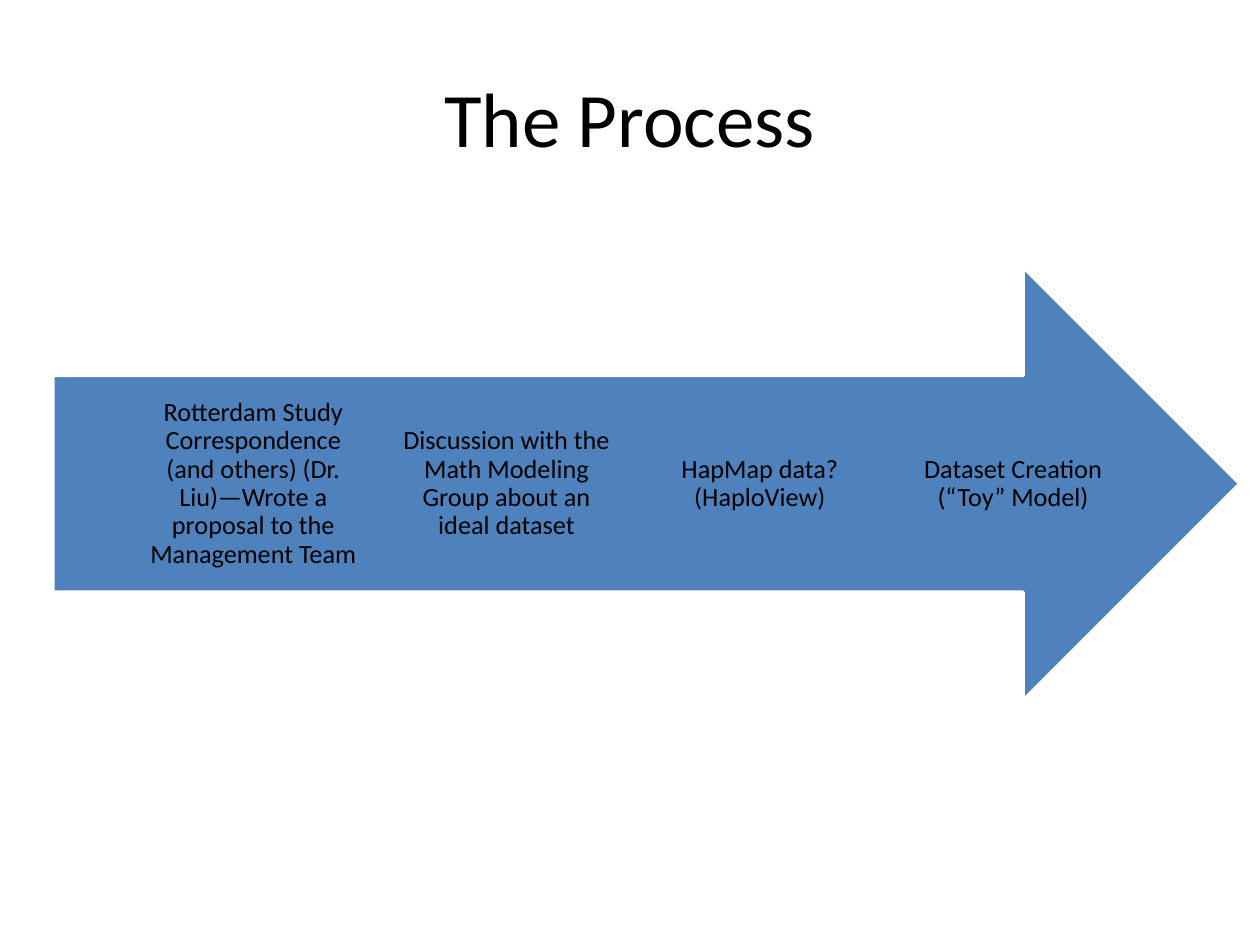
"""Build the process slide: a title over one wide arrow carrying four steps."""
import pptx
import pptx.dml.color
import pptx.enum.shapes
import pptx.enum.text
import pptx.util

TITLE = "The Process"
STEPS = [
    "Rotterdam Study Correspondence (and others) (Dr. Liu)—Wrote a proposal to the Management Team",
    "Discussion with the Math Modeling Group about an ideal dataset",
    "HapMap data? (HaploView)",
    "Dataset Creation (“Toy” Model)",
]

THEME = {
    "font": "Calibri",
    "text": pptx.dml.color.RGBColor.from_string("000000"),
    "arrow": pptx.dml.color.RGBColor.from_string("4F81BD"),
    "outline": pptx.dml.color.RGBColor.from_string("FFFFFF"),
    "outline_width": pptx.util.Pt(2),
    "title_size": pptx.util.Pt(44),
    "step_size": pptx.util.Pt(15),
}

WIDTH, HEIGHT = 10, 7.5
TITLE_AREA = (0.5, 0.3, 9, 1.25)
ARROW_AREA = (0.42, 2.12, 9.42, 3.44)
FIRST_STEP, STEP_PITCH, STEP_WIDTH = 1.17, 2.01, 1.68


def inches(area):
    return [pptx.util.Inches(length) for length in area]


def apply(target, values):
    for name, value in values.items():
        setattr(target, name, value)


def add_label(slide, area, wording, size, frame_format, paragraph_format):
    frame = slide.shapes.add_textbox(*inches(area)).text_frame
    apply(frame, {
        "word_wrap": True,
        "vertical_anchor": pptx.enum.text.MSO_ANCHOR.MIDDLE,
        **frame_format,
    })
    paragraph = frame.paragraphs[0]
    apply(paragraph, {"alignment": pptx.enum.text.PP_ALIGN.CENTER, **paragraph_format})
    run = paragraph.add_run()
    run.text = wording
    apply(run.font, {"name": THEME["font"], "size": size})
    run.font.color.rgb = THEME["text"]


def add_arrow(slide):
    arrow = slide.shapes.add_shape(
        pptx.enum.shapes.MSO_SHAPE.RIGHT_ARROW, *inches(ARROW_AREA))
    arrow.shadow.inherit = False
    arrow.fill.solid()
    arrow.fill.fore_color.rgb = THEME["arrow"]
    arrow.line.color.rgb = THEME["outline"]
    arrow.line.width = THEME["outline_width"]


def add_steps(slide):
    _, arrow_top, _, arrow_height = ARROW_AREA
    shaft_top, shaft_height = arrow_top + arrow_height / 4, arrow_height / 2
    inset = pptx.util.Inches(shaft_height / 10)
    frame_format = {"margin_left": 0, "margin_right": 0,
                    "margin_top": inset, "margin_bottom": inset}
    for column, step in enumerate(STEPS):
        area = (FIRST_STEP + column * STEP_PITCH, shaft_top, STEP_WIDTH, shaft_height)
        add_label(slide, area, step, THEME["step_size"], frame_format,
                  {"line_spacing": 0.9})


def main():
    deck = pptx.Presentation()
    apply(deck, {"slide_width": pptx.util.Inches(WIDTH),
                 "slide_height": pptx.util.Inches(HEIGHT)})
    slide = deck.slides.add_slide(deck.slide_layouts[6])
    add_arrow(slide)
    add_steps(slide)
    add_label(slide, TITLE_AREA, TITLE, THEME["title_size"], {}, {})
    deck.save("out.pptx")


if __name__ == "__main__":
    main()
